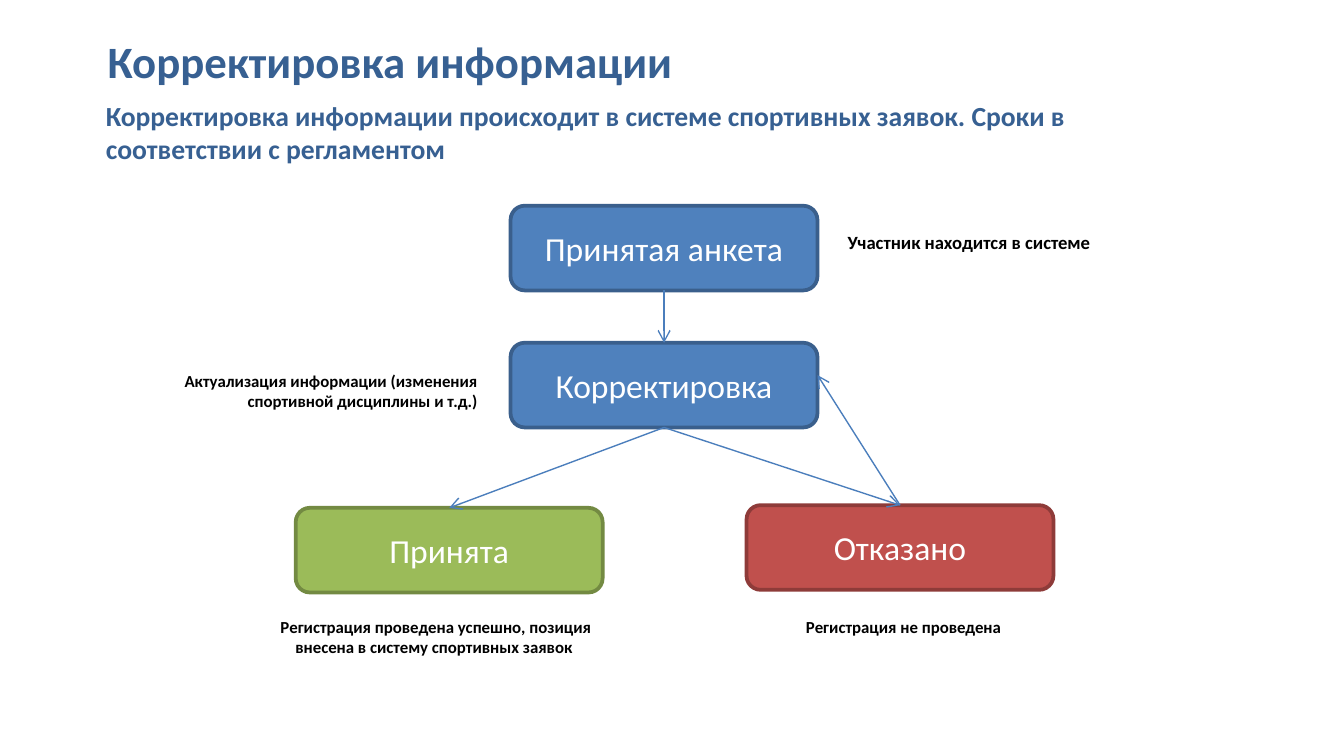
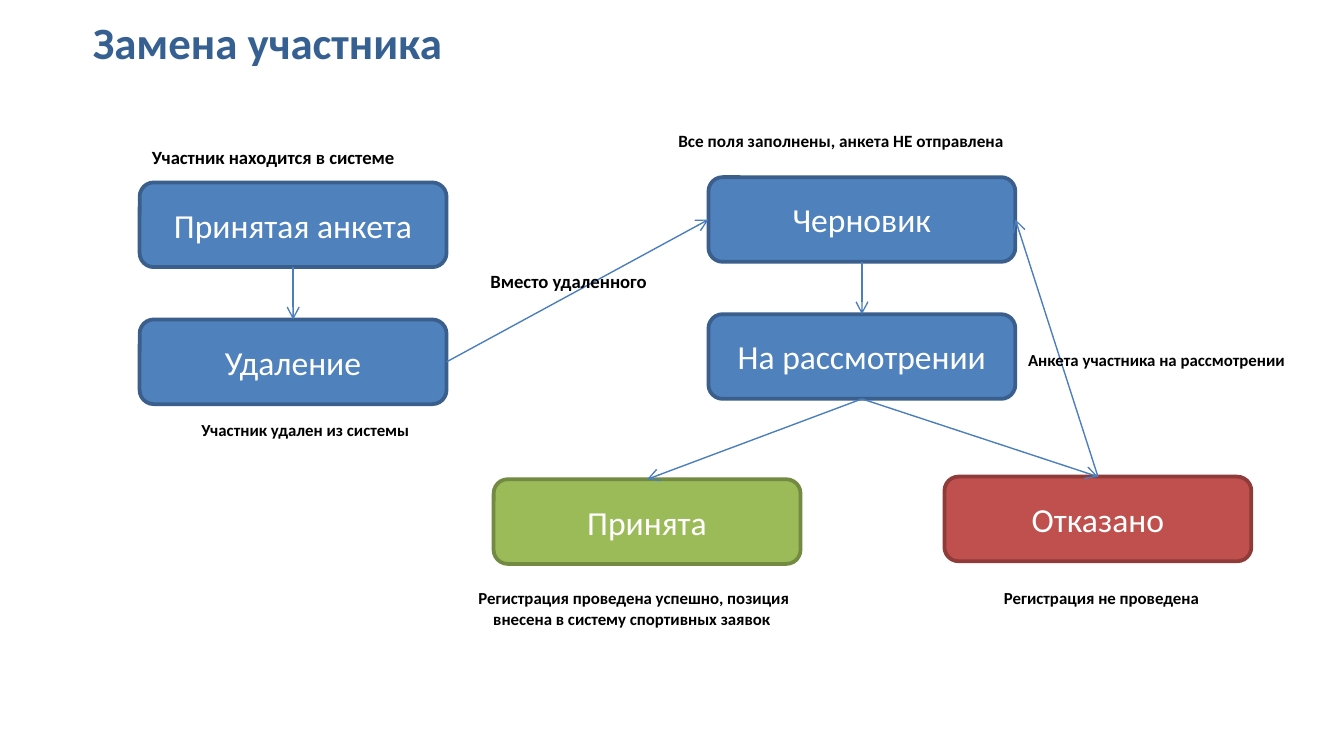
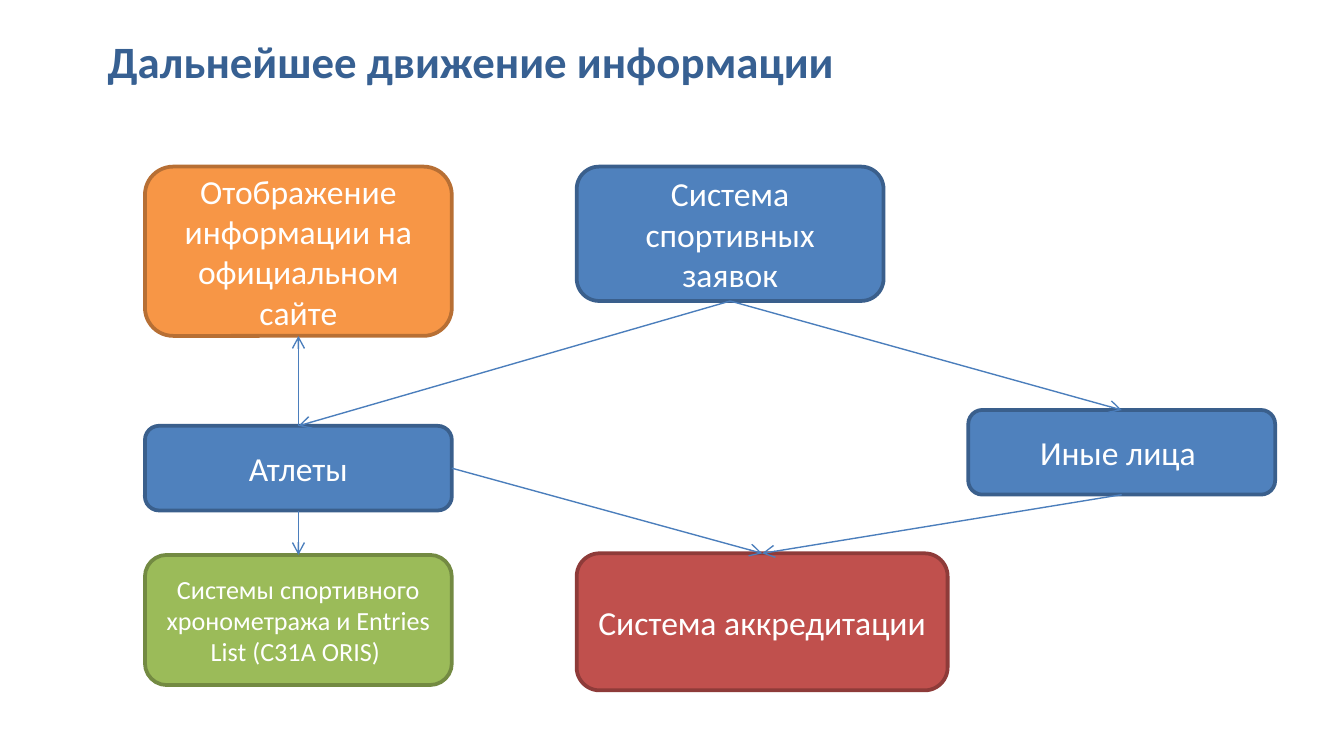
"""Build three flow slides on how sports entries are corrected, replaced and passed on."""
from lxml import etree
from pptx import Presentation
from pptx.dml.color import RGBColor
from pptx.enum.shapes import MSO_CONNECTOR, MSO_SHAPE
from pptx.enum.text import MSO_ANCHOR, MSO_AUTO_SIZE, PP_ALIGN
from pptx.oxml.ns import qn
from pptx.util import Cm, Pt

LEFT, MID, RIGHT = PP_ALIGN.LEFT, PP_ALIGN.CENTER, PP_ALIGN.RIGHT
ROUND = MSO_SHAPE.ROUNDED_RECTANGLE
LINE = MSO_CONNECTOR.STRAIGHT
TOP, CENTER = MSO_ANCHOR.TOP, MSO_ANCHOR.MIDDLE
FIXED = MSO_AUTO_SIZE.NONE
FONT = "Calibri"

NAVY = RGBColor(0x37, 0x60, 0x92)
BLACK = RGBColor(0, 0, 0)
WHITE = RGBColor(0xFF, 0xFF, 0xFF)
WIRE = RGBColor(0x4B, 0x7E, 0xBC)
BLUE = RGBColor(0x4F, 0x81, 0xBD), RGBColor(0x3A, 0x5F, 0x8C)
RED = RGBColor(0xC0, 0x50, 0x4D), RGBColor(0x8E, 0x3B, 0x39)
GREEN = RGBColor(0x9B, 0xBB, 0x59), RGBColor(0x73, 0x8A, 0x42)
AMBER = RGBColor(0xF7, 0x96, 0x46), RGBColor(0xB7, 0x6F, 0x34)

WIDE, HIGH = 5.8, 1.6
SPAN, ROW, TALL = 7.47, 0.79, 1.07


def style(frame, size, tint, bold, align):
    """Format all text in a frame."""
    frame.word_wrap = True
    for para in frame.paragraphs:
        para.alignment = align
        for run in para.runs:
            run.font.name = FONT
            run.font.size = Pt(size)
            run.font.bold = bold
            run.font.color.rgb = tint


def review(x, y, first, second):
    """Return the boxes, notes and links of a review flow whose first box is at x, y."""
    boxes = [
        (first, BLUE, x, y, WIDE, HIGH, 18),
        (second, BLUE, x, y + 2.59, WIDE, HIGH, 18),
        ("Отказано", RED, x + 4.46, y + 5.66, WIDE, HIGH, 18),
        ("Принята", GREEN, x - 4.06, y + 5.71, WIDE, HIGH, 18),
    ]
    notes = [
        ("Регистрация проведена успешно, позиция внесена в систему спортивных заявок ",
         x - 5.15, y + 7.64, SPAN, TALL, 9, MID, BLACK),
        ("Регистрация не проведена", x + 3.69, y + 7.64, SPAN, TALL, 9, MID, BLACK),
    ]
    links = [(0, 2, 1, 0), (1, 2, 3, 0), (1, 2, 2, 0)]
    return boxes, notes, links


fix_box, fix_note, fix_link = review(9.65, 3.89, "Принятая анкета", "Корректировка")
fix_note += [
    ("Корректировка информации происходит в системе спортивных заявок. Сроки в соответствии с регламентом",
     1.75, 1.75, 21.59, 2, 14.8, LEFT, NAVY),
    ("Участник находится в системе", 15.77, 4.24, SPAN, ROW, 10, LEFT, BLACK),
    ("Актуализация информации (изменения спортивной дисциплины и т.д.)",
     1.8, 6.88, SPAN, TALL, 9, RIGHT, BLACK),
]
fix_link.append((2, 0, (15.45, 7.09), None))

swap_box, swap_note, swap_link = review(13.39, 3.35, "Черновик", "На рассмотрении")
swap_box += [
    ("Принятая анкета", BLUE, 2.64, 3.45, WIDE, HIGH, 18),
    ("Удаление", BLUE, 2.64, 6.04, WIDE, HIGH, 18),
]
swap_note += [
    ("Участник находится в системе", 2.62, 2.64, SPAN, ROW, 10, LEFT, BLACK),
    ("Участник удален из системы", 0.51, 7.8, SPAN, TALL, 9, RIGHT, BLACK),
    ("Все поля заполнены, анкета НЕ отправлена", 12.57, 2.34, SPAN, ROW, 9.2, LEFT, BLACK),
    ("Анкета участника на рассмотрении", 19.18, 6.48, SPAN, TALL, 9, LEFT, BLACK),
    ("Вместо удаленного", 9.02, 4.98, 3.81, ROW, 10, LEFT, BLACK),
]
swap_link += [(2, 0, 0, 3), (4, 2, 5, 0), (5, 3, 0, 1)]

data_box = [
    ("Система спортивных заявок", BLUE, 10.9, 3.15, WIDE, 2.54, 18),
    ("Атлеты", BLUE, 2.74, 8.05, WIDE, HIGH, 18),
    ("Система аккредитации", RED, 10.9, 10.46, 7.01, 2.59, 18),
    ("Системы спортивного хронометража и Entries List (С31A ORIS) ",
     GREEN, 2.74, 10.49, WIDE, 2.46, 14),
    ("Иные лица ", BLUE, 18.3, 7.75, WIDE, HIGH, 18),
    ("Отображение информации на официальном сайте", AMBER, 2.74, 3.15, WIDE, 3.2, 18),
]
data_link = [(0, 2, 1, 0), (1, 2, 3, 0), (0, 2, 4, 0), (4, 2, 2, 0), (1, 3, 2, 0), (1, 0, 5, 2)]

pages = [
    ("Корректировка информации", 1.78, 0.51, fix_box, fix_note, fix_link),
    ("Замена участника", 1.5, 0.15, swap_box, swap_note, swap_link),
    ("Дальнейшее движение информации", 1.78, 0.51, data_box, [], data_link),
]

deck = Presentation()
deck.slide_width, deck.slide_height = Cm(25.4), Cm(14.29)

for head, left, top, boxes, notes, links in pages:
    slide = deck.slides.add_slide(deck.slide_layouts[5])
    title = slide.shapes.title
    title.left, title.top, title.width, title.height = Cm(left), Cm(top), Cm(18), Cm(2.59)
    title.text_frame.text = head
    title.text_frame.vertical_anchor = TOP
    title.text_frame.auto_size = FIXED
    style(title.text_frame, 24, NAVY, True, LEFT)

    nodes = []
    for text, tone, x, y, wide, high, size in boxes:
        node = slide.shapes.add_shape(ROUND, Cm(x), Cm(y), Cm(wide), Cm(high))
        node.shadow.inherit = False
        node.fill.solid()
        node.fill.fore_color.rgb, node.line.color.rgb = tone
        node.line.width = Pt(2)
        node.text_frame.text = text
        node.text_frame.vertical_anchor = CENTER
        style(node.text_frame, size, WHITE, False, MID)
        nodes.append(node)

    for start, out, goal, side in links:
        wire = slide.shapes.add_connector(LINE, 0, 0, 0, 0)
        wire.begin_connect(nodes[start], out)
        if side is None:
            wire.end_x, wire.end_y = Cm(goal[0]), Cm(goal[1])
        else:
            wire.end_connect(nodes[goal], side)
        wire.line.color.rgb = WIRE
        wire.line.width = Pt(0.75)
        etree.SubElement(wire.line.fill and wire.line._get_or_add_ln(), qn("a:tailEnd"), type="arrow")
        etree.SubElement(wire._element.spPr, qn("a:effectLst"))

    for text, x, y, wide, high, size, align, tint in notes:
        note = slide.shapes.add_textbox(Cm(x), Cm(y), Cm(wide), Cm(high))
        note.text_frame.text = text
        style(note.text_frame, size, tint, True, align)

deck.save("out.pptx")
